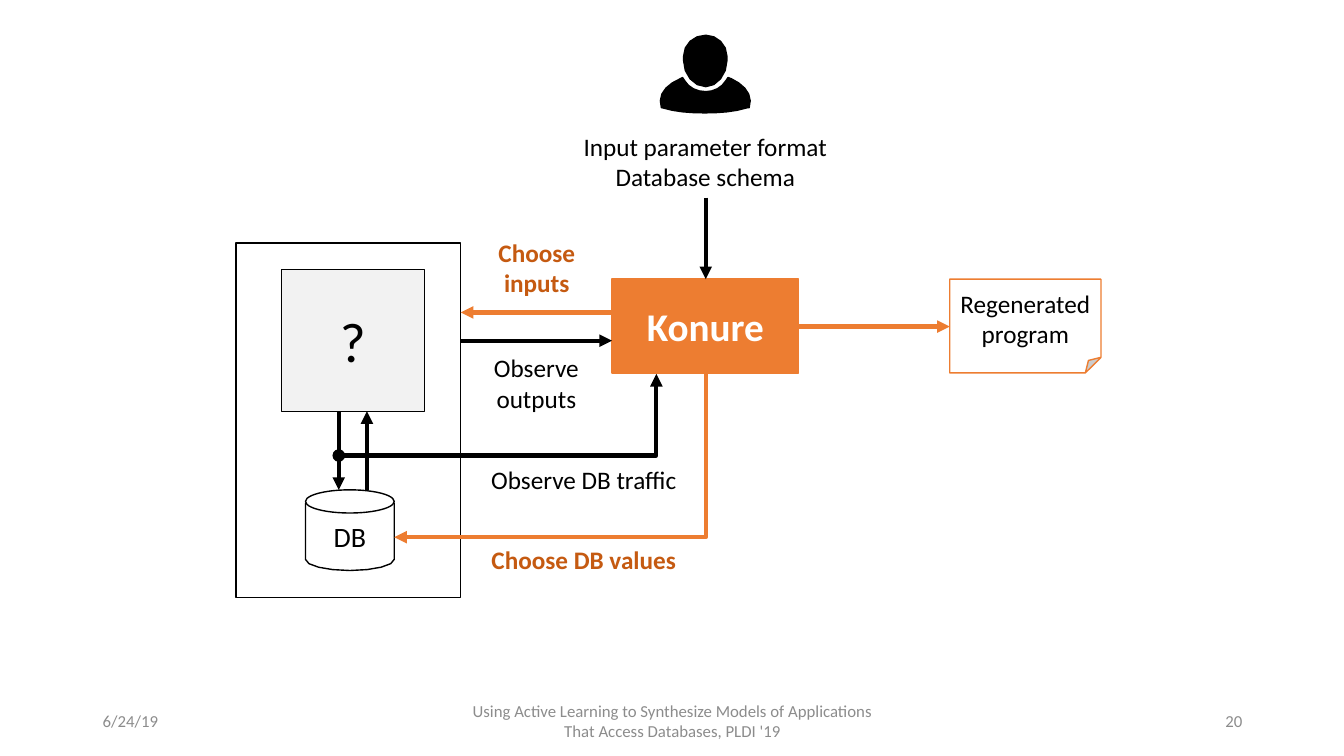
from lxml import etree
from pptx import Presentation
from pptx.dml.color import RGBColor
from pptx.enum.shapes import MSO_CONNECTOR, MSO_SHAPE
from pptx.enum.text import MSO_ANCHOR, PP_ALIGN
from pptx.oxml.ns import qn
from pptx.util import Inches, Pt

RECT, FOLDED, OVAL = MSO_SHAPE.RECTANGLE, MSO_SHAPE.FOLDED_CORNER, MSO_SHAPE.OVAL
STRAIGHT, ELBOW = MSO_CONNECTOR.STRAIGHT, MSO_CONNECTOR.ELBOW
TOP, MIDDLE = MSO_ANCHOR.TOP, MSO_ANCHOR.MIDDLE
LEFT, CENTER, RIGHT = PP_ALIGN.LEFT, PP_ALIGN.CENTER, PP_ALIGN.RIGHT

BLACK, WHITE, ORANGE, RUST = "000000", "FFFFFF", "ED7D31", "C55A11"
GRAY, PALE = "8C8C8C", "F2F2F2"

DB_BODY = [
    [(3.03, 4.99), (3.91, 4.99)],
    [(3.91, 5.55), (3.91, 5.61), (3.71, 5.66), (3.47, 5.66)],
    [(3.47, 5.66), (3.23, 5.66), (3.03, 5.61), (3.03, 5.55)],
]
USER_BODY = [
    [(6.77, 0.77), (6.79, 0.8)],
    [(6.79, 0.8), (6.83, 0.87), (6.91, 0.91), (7, 0.91)],
    [(7, 0.91), (7.08, 0.91), (7.16, 0.87), (7.2, 0.8)],
    [(7.22, 0.77), (7.25, 0.78)],
    [(7.25, 0.78), (7.36, 0.83), (7.44, 0.91), (7.44, 1)],
    [(7.44, 1), (7.43, 1.07)],
    [(7.41, 1.07), (7.28, 1.11), (7.14, 1.12), (6.99, 1.12)],
    [(6.99, 1.12), (6.84, 1.12), (6.7, 1.11), (6.57, 1.07)],
    [(6.56, 1.07), (6.55, 1)],
    [(6.55, 1), (6.55, 0.91), (6.63, 0.83), (6.75, 0.78)],
]
USER_HEAD = [
    [(7, 0.35), (7.11, 0.35), (7.21, 0.44), (7.21, 0.56)],
    [(7.21, 0.6), (7.21, 0.74), (7.11, 0.86), (7, 0.86)],
    [(7, 0.86), (6.88, 0.86), (6.78, 0.74), (6.78, 0.6)],
    [(6.78, 0.56), (6.78, 0.44), (6.88, 0.35), (7, 0.35)],
]
CURVE_STEPS = 4

BOXES = [
    (RECT, (6.07, 2.77, 1.85, 0.93), ORANGE, ORANGE, 1, "Konure",
     {"size": 28, "color": WHITE, "bold": True}),
    (RECT, (2.34, 2.41, 2.23, 3.52), WHITE, BLACK, 1, "", {}),
    (FOLDED, (9.42, 2.77, 1.5, 0.93), WHITE, ORANGE, 1, "Regenerated program", {}),
    (RECT, (2.79, 2.67, 1.42, 1.41), PALE, BLACK, 0.5, "?", {"size": 40}),
    (None, [DB_BODY], WHITE, BLACK, 1, "DB", {"size": 20}),
    (OVAL, (3.03, 4.86, 0.88, 0.23), WHITE, BLACK, 1, "", {}),
    (None, [USER_BODY, USER_HEAD], BLACK, BLACK, 1, "", {}),
]

CHOICE = {"color": RUST, "bold": True}
LABELS = [
    ((4.81, 2.3, 1.03, 0.71), "Choose inputs", CHOICE),
    ((4.69, 5.35, 2.2, 0.4), "Choose DB values", CHOICE),
    ((5.6, 1.25, 2.79, 0.71), "Input parameter format\nDatabase schema", {}),
    ((4.69, 3.45, 1.26, 0.71), "Observe outputs", {}),
    ((4.69, 4.56, 2.2, 0.4), "Observe DB traffic", {}),
]

FOOTERS = [
    (0.92, 3, "6/24/19", LEFT),
    (4.42, 4.5, "Using Active Learning to Synthesize Models of Applications "
     "That Access Databases, PLDI '19", CENTER),
    (9.42, 3, "20", RIGHT),
]

ARROWS = [
    (STRAIGHT, (4.57, 3.1), (6.07, 3.1), ORANGE, {"headEnd": "triangle"}),
    (STRAIGHT, (4.57, 3.38), (6.07, 3.38), BLACK, {"tailEnd": "triangle"}),
    (STRAIGHT, (7.92, 3.24), (9.42, 3.24), ORANGE, {"tailEnd": "triangle"}),
    (STRAIGHT, (7, 1.96), (7, 2.77), BLACK, {"tailEnd": "triangle"}),
    (STRAIGHT, (3.36, 4.08), (3.36, 4.86), BLACK, {"tailEnd": "triangle"}),
    (STRAIGHT, (3.64, 4.08), (3.64, 4.86), BLACK, {"headEnd": "triangle"}),
    (ELBOW, (3.91, 5.33), (7, 3.71), ORANGE, {"headEnd": "triangle"}),
    (ELBOW, (3.36, 4.52), (6.51, 3.71), BLACK,
     {"headEnd": "oval", "tailEnd": "triangle"}),
]


def rgb(color):
    return RGBColor.from_string(color)


def inches(values):
    return [Inches(v) for v in values]


def paint(sp, fill, line, width):
    sp.shadow.inherit = False
    sp.fill.solid()
    sp.fill.fore_color.rgb = rgb(fill)
    sp.line.color.rgb = rgb(line)
    sp.line.width = Pt(width)


def write(sp, text, fmt, align=CENTER, anchor=MIDDLE):
    fmt = {"size": 18, "color": BLACK, "bold": False, **fmt}
    font = {"name": "Calibri", "size": Pt(fmt["size"]), "bold": fmt["bold"]}
    tf = sp.text_frame
    tf.word_wrap = True
    tf.vertical_anchor = anchor
    for i, line in enumerate(text.split("\n")):
        p = tf.add_paragraph() if i else tf.paragraphs[0]
        p.alignment = align
        r = p.add_run()
        r.text = line
        for key, value in font.items():
            setattr(r.font, key, value)
        r.font.color.rgb = rgb(fmt["color"])


def connect(shapes, kind, start, end, color, ends):
    cx = shapes.add_connector(kind, *inches(start + end))
    cx.line.color.rgb = rgb(color)
    cx.line.width = Pt(3)
    spPr = cx.line._get_or_add_ln().getparent()
    for tag, shape in ends.items():
        etree.SubElement(spPr.find(qn("a:ln")), qn("a:" + tag), type=shape)
    etree.SubElement(spPr, qn("a:effectLst"))
    if kind == ELBOW:
        spPr.find(qn("a:prstGeom")).set("prst", "bentConnector2")


def bezier_point(points, t):
    while len(points) > 1:
        points = [(a + (c - a) * t, b + (d - b) * t)
                  for (a, b), (c, d) in zip(points, points[1:])]
    return inches(points[0])


def flatten(curves):
    points = []
    for curve in curves:
        steps = CURVE_STEPS if len(curve) > 2 else 1
        for i in range(steps + 1):
            point = bezier_point(curve, i / steps)
            if point not in points:
                points.append(point)
    return points


def outline(shapes, contours):
    first, *others = [flatten(curves) for curves in contours]
    fb = shapes.build_freeform(*first[0])
    fb.add_line_segments(first[1:], close=True)
    for points in others:
        fb.move_to(*points[0])
        fb.add_line_segments(points[1:], close=True)
    return fb.convert_to_shape()


def main():
    prs = Presentation()
    prs.slide_width, prs.slide_height = Inches(13.33), Inches(7.5)
    shapes = prs.slides.add_slide(prs.slide_layouts[6]).shapes

    for left, width, text, align in FOOTERS:
        sp = shapes.add_textbox(*inches((left, 6.95, width, 0.4)))
        write(sp, text, {"size": 12, "color": GRAY}, align)
    for kind, place, fill, line, width, text, fmt in BOXES:
        if kind is None:
            sp = outline(shapes, place)
        else:
            sp = shapes.add_shape(kind, *inches(place))
        paint(sp, fill, line, width)
        if text:
            write(sp, text, fmt)
    for place, text, fmt in LABELS:
        write(shapes.add_textbox(*inches(place)), text, fmt, anchor=TOP)
    for arrow in ARROWS:
        connect(shapes, *arrow)

    prs.save("out.pptx")


if __name__ == "__main__":
    main()
